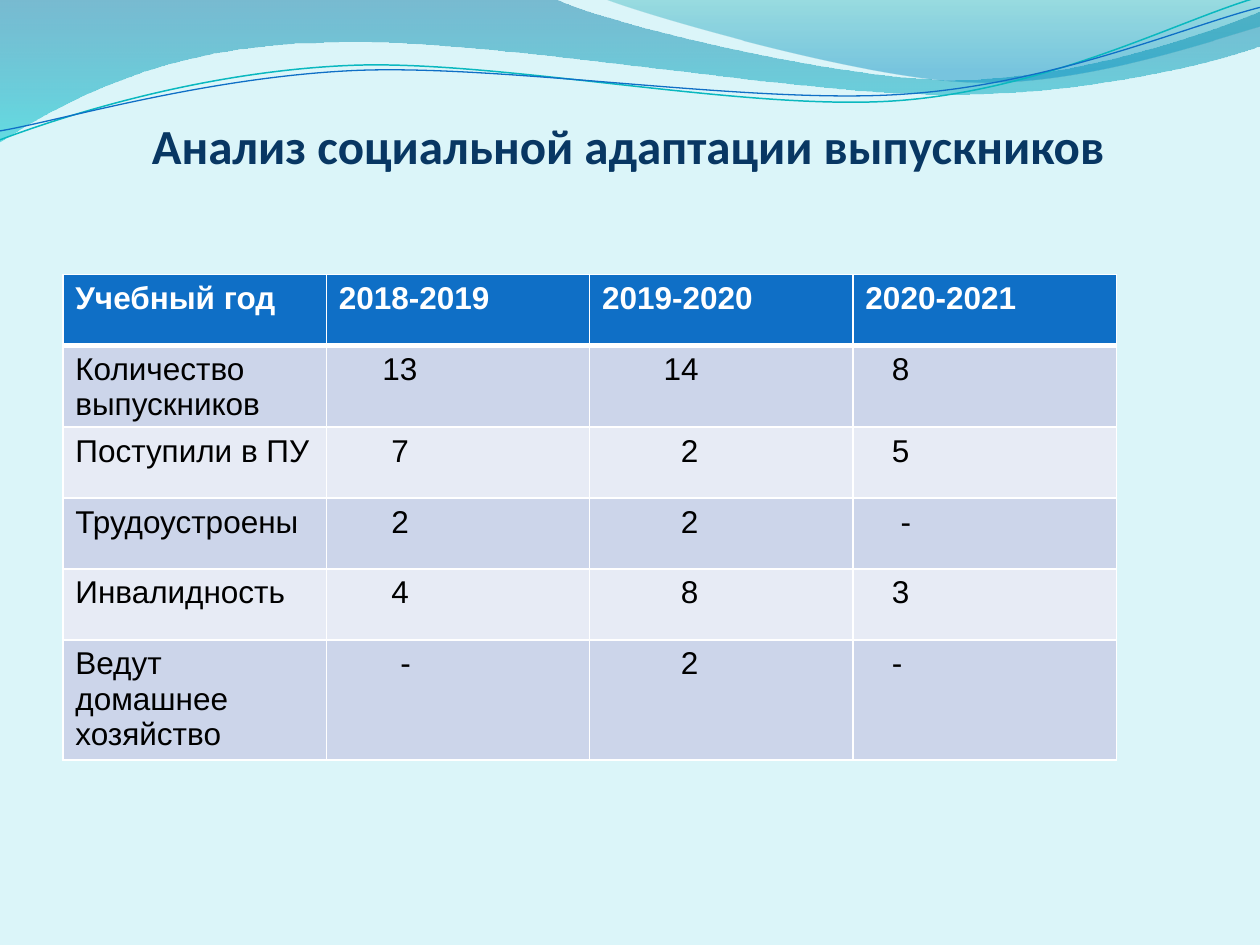
from lxml import etree
from pptx import Presentation
from pptx.dml.color import RGBColor
from pptx.enum.text import MSO_ANCHOR, PP_ALIGN
from pptx.oxml.ns import qn
from pptx.util import Cm, Pt

CENTER = PP_ALIGN.CENTER
BOTTOM = MSO_ANCHOR.BOTTOM
COLORS = {
    "background": "DBF5F9", "title": "083763", "header": "0F6FC6",
    "band_dark": "CCD5EA", "band_light": "E7EBF5",
    "white": "FFFFFF", "black": "000000",
    "wave_top": "0074A1", "wave_bottom": "00C6CF",
    "crest_top": "00A1A9", "crest_bottom": "008BBF",
    "teal_line": "0AB8BF", "blue_line": "0F6FC6",
}


def rgb(name):
    return RGBColor.from_string(COLORS[name])


def draw_curve(shapes, start, segments, close):
    points = [pair for s in segments for pair in zip(s[::2], s[1::2])]
    builder = shapes.build_freeform(Cm(start[0]), Cm(start[1]))
    builder.add_line_segments([(Cm(x), Cm(y)) for x, y in points], close=close)
    curve = builder.convert_to_shape()
    curve.shadow.inherit = False
    steps = iter(list(curve.element.spPr.iter(qn("a:lnTo"))))
    for segment in segments:
        first = next(steps)
        if len(segment) == 6:
            bezier = etree.Element(qn("a:cubicBezTo"))
            first.addprevious(bezier)
            for step in (first, next(steps), next(steps)):
                bezier.append(step[0])
                step.getparent().remove(step)
    return curve


prs = Presentation()
prs.slide_width, prs.slide_height = Cm(25.4), Cm(19.05)
slide = prs.slides.add_slide(prs.slide_layouts[6])
slide.background.fill.solid()
slide.background.fill.fore_color.rgb = rgb("background")

waves = [
    ((0, -0.03),
     [(11.18, -0.03), (12.09, 0.43, 16.87, 1.6, 19.25, 1.6),
      (21.67, 1.6, 24.33, 0.66, 25.4, 0.23), (25.43, 0.91),
      (24.97, 1.12, 22.1, 1.93, 18.95, 1.9),
      (15.8, 1.9, 9.7, 0.71, 6.53, 0.86),
      (3.28, 0.89, 1.17, 2.11, -0.03, 2.87), (0, -0.03)],
     [("wave_top", 0, 45), ("wave_bottom", 1, 55)]),
    ((12.17, -0.03),
     [(12.93, 0.28, 17.32, 1.57, 19.53, 1.65),
      (21.74, 1.75, 24.41, 0.81, 25.4, 0.53), (25.4, 0), (12.17, -0.03)],
     [("crest_top", 0, 30), ("crest_bottom", 0.8, 45)]),
]
for start, segments, stops in waves:
    wave = draw_curve(slide.shapes, start, segments, True)
    wave.line.fill.background()
    wave.fill.gradient()
    wave.fill.gradient_angle = 270
    for stop, (color, position, opacity) in zip(wave.fill.gradient_stops, stops):
        stop.color.rgb = rgb(color)
        stop.position = position
    for tint, (color, position, opacity) in zip(wave.element.spPr.iter(qn("a:srgbClr")), stops):
        etree.SubElement(tint, qn("a:alpha"), val=str(opacity * 1000))

ripples = [
    ((0, 2.82),
     [(1.22, 2.36, 4.01, 1.45, 7.04, 1.32),
      (10.03, 1.19, 15.06, 2.26, 18.11, 2.03),
      (21.16, 1.8, 23.83, 0.38, 25.35, -0.05)], "teal_line", 0.85),
    ((0, 2.64),
     [(1.19, 2.44, 4.17, 1.55, 7.19, 1.42),
      (10.24, 1.3, 15.16, 2.11, 18.21, 1.9),
      (21.23, 1.7, 23.9, 0.53, 25.4, 0.15)], "blue_line", 0.75),
]
for start, segments, color, width in ripples:
    ripple = draw_curve(slide.shapes, start, segments, False)
    ripple.fill.background()
    ripple.line.color.rgb = rgb(color)
    ripple.line.width = Pt(width)

title = slide.shapes.add_textbox(Cm(1.23), Cm(1.12), Cm(22.86), Cm(2.39)).text_frame
title.word_wrap = True
title.vertical_anchor = BOTTOM
title.margin_left = title.margin_right = title.margin_bottom = 0
heading = title.paragraphs[0]
heading.text = "Анализ социальной адаптации выпускников"
heading.alignment = CENTER
heading.font.name = "Calibri"
heading.font.size = Pt(28)
heading.font.bold = True
heading.font.color.rgb = rgb("title")

graduates = [
    ["Учебный год", "2018-2019", "2019-2020", "2020-2021"],
    ["Количество выпускников", "13", "14", "8"],
    ["Поступили в ПУ", "7", "2", "5"],
    ["Трудоустроены", "2", "2", "-"],
    ["Инвалидность", "4", "8", "3"],
    ["Ведут домашнее хозяйство", "-", "2", "-"],
]
indents = [
    [0, 0, 0, 0],
    [0, 0.88, 1.24, 0.53],
    [0, 1.06, 1.59, 0.53],
    [0, 1.06, 1.59, 0.71],
    [0, 1.06, 1.59, 0.53],
    [0, 1.24, 1.59, 0.53],
]
table = slide.shapes.add_table(6, 4, Cm(1.27), Cm(5.53), Cm(21.24), Cm(8.58)).table
for column in table.columns:
    column.width = Cm(5.31)
for r, texts in enumerate(graduates):
    table.rows[r].height = Cm(1.43)
    band = "header" if r == 0 else "band_dark" if r % 2 else "band_light"
    edges = {"lnL": 1, "lnR": 1, "lnT": 3 if r == 1 else 1, "lnB": 3 if r == 0 else 1}
    for c, text in enumerate(texts):
        cell = table.cell(r, c)
        cell.margin_left = Cm(0.25 + indents[r][c])
        cell.margin_bottom = 0
        cell.fill.solid()
        cell.fill.fore_color.rgb = rgb(band)
        entry = cell.text_frame.paragraphs[0]
        entry.text = text
        entry.font.name = "Arial"
        entry.font.size = Pt(18)
        entry.font.bold = r == 0
        entry.font.color.rgb = rgb("white" if r == 0 else "black")
        properties = cell._tc.get_or_add_tcPr()
        for place, (edge, width) in enumerate(edges.items()):
            border = etree.Element(qn("a:" + edge), w=str(Pt(width)))
            paint = etree.SubElement(border, qn("a:solidFill"))
            etree.SubElement(paint, qn("a:srgbClr"), val=COLORS["white"])
            properties.insert(place, border)

prs.save("out.pptx")
